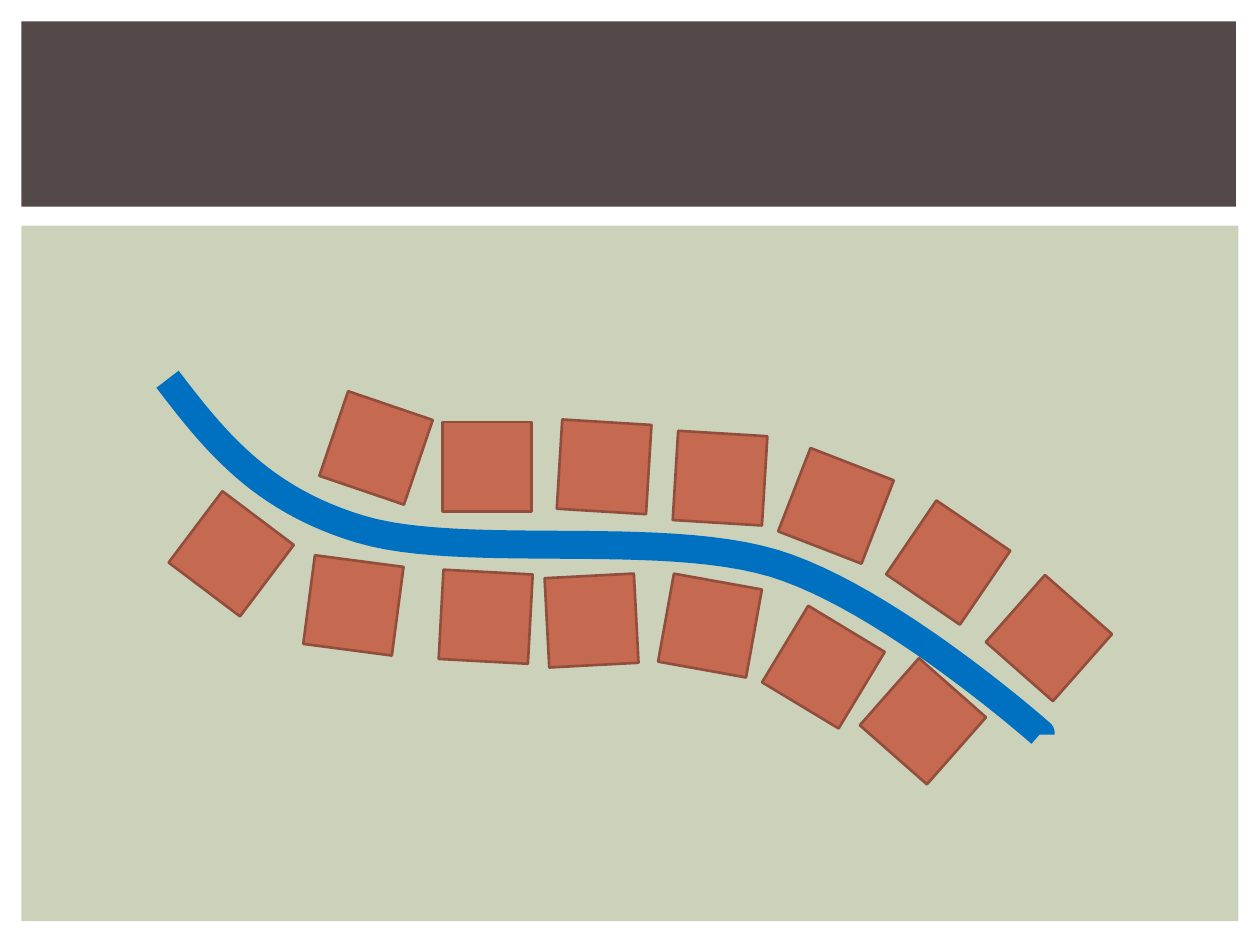
from pptx import Presentation
from pptx.dml.color import RGBColor
from pptx.enum.shapes import MSO_SHAPE
from pptx.util import Inches, Pt

COLORS = {"field": "CCD1B9", "band": "534949", "river": "0070C0",
          "house": "C66951", "edge": "924E3C"}
PANELS = [("field", 0.17, 1.79, 9.66, 5.52), ("band", 0.17, 0.17, 9.64, 1.47)]
SOURCE = (1.33, 3.01)
BENDS = [
    ((1.69, 3.48), (2.06, 3.96), (2.86, 4.2)),
    ((3.66, 4.44), (5.24, 4.2), (6.14, 4.47)),
    ((7.04, 4.74), (8.26, 5.82), (8.26, 5.82)),
]
MOUTH = (8.26, 5.83)
STEPS = 24
SIDE = 0.71
NORTH = [(2.63, 3.2, 18.8), (3.51, 3.35, 0), (4.44, 3.35, 3.5), (5.36, 3.44, 3.5),
         (6.28, 3.66, 21.2), (7.17, 4.11, 34.3), (7.97, 4.71, 41.4)]
SOUTH = [(1.48, 4.04, 37), (2.45, 4.45, 7.5), (3.5, 4.54, 3.1), (4.34, 4.57, 357),
         (5.28, 4.61, 10.2), (6.18, 4.94, 31.1), (6.97, 5.37, 41.4)]


def color(name):
    return RGBColor.from_string(COLORS[name])


def add_rect(slide, name, left, top, width, height):
    rect = slide.shapes.add_shape(
        MSO_SHAPE.RECTANGLE, *map(Inches, (left, top, width, height)))
    rect.shadow.inherit = False
    rect.fill.solid()
    rect.fill.fore_color.rgb = color(name)
    rect.line.fill.background()
    return rect


def add_house(slide, left, top, turn):
    house = add_rect(slide, "house", left, top, SIDE, SIDE)
    house.rotation = turn
    house.line.color.rgb = color("edge")
    house.line.width = Pt(1.5)


def bezier(knots, t):
    u = 1 - t
    parts = (u ** 3, 3 * u * u * t, 3 * u * t * t, t ** 3)
    return tuple(sum(w * k[i] for w, k in zip(parts, knots)) for i in (0, 1))


def add_river(slide):
    points, start = [], SOURCE
    for bend in BENDS:
        points += [bezier((start, *bend), n / STEPS) for n in range(1, STEPS + 1)]
        start = bend[-1]
    points.append(MOUTH)
    pen = slide.shapes.build_freeform(*map(Inches, SOURCE))
    pen.add_line_segments([(Inches(x), Inches(y)) for x, y in points], close=False)
    river = pen.convert_to_shape()
    river.shadow.inherit = False
    river.fill.background()
    river.line.color.rgb = color("river")
    river.line.width = Pt(16)


def main():
    deck = Presentation()
    deck.slide_width, deck.slide_height = Inches(10), Inches(7.5)
    slide = deck.slides.add_slide(deck.slide_layouts[6])
    for panel in PANELS:
        add_rect(slide, *panel)
    add_river(slide)
    for house in NORTH + SOUTH:
        add_house(slide, *house)
    deck.save("out.pptx")


if __name__ == "__main__":
    main()
